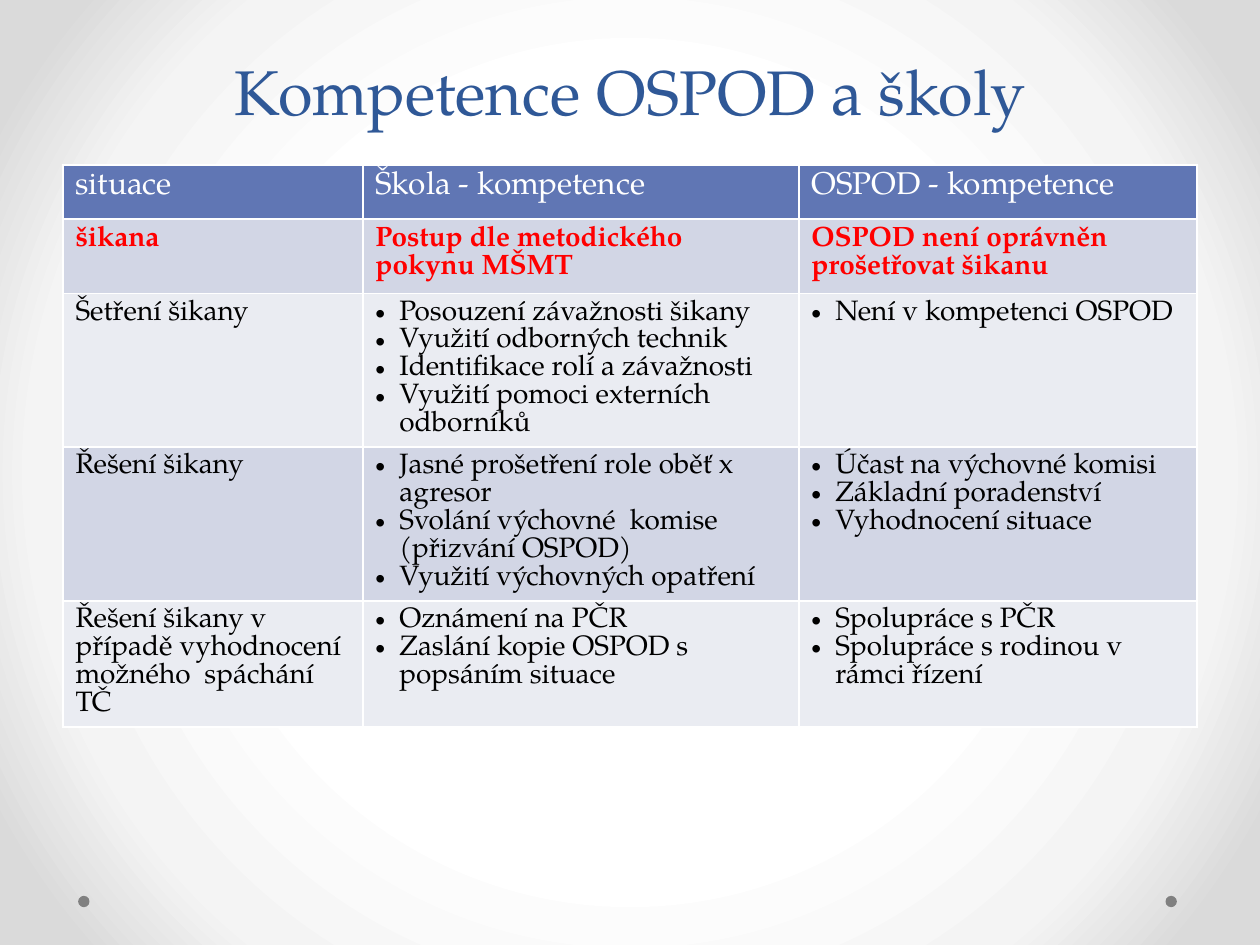
from lxml import etree
from pptx import Presentation
from pptx.dml.color import RGBColor
from pptx.enum.shapes import MSO_SHAPE
from pptx.enum.text import MSO_ANCHOR, PP_ALIGN
from pptx.oxml.ns import qn
from pptx.util import Inches, Pt

OVAL = MSO_SHAPE.OVAL
BOTTOM = MSO_ANCHOR.BOTTOM
CENTER = PP_ALIGN.CENTER
FONT = "TeX Gyre Pagella"
COLORS = {
    "title": "2F5897", "head": "6076B4", "odd": "D2D6E5", "even": "EAECF2",
    "white": "FFFFFF", "black": "000000", "red": "FF0000", "dot": "808080",
}
GLOW = [(50, "FFFFFF"), (76, "F4F4F4"), (92, "DADADA")]

TITLE = "Kompetence OSPOD a školy"
ROWS = [
    ("situace", "Škola - kompetence", "OSPOD - kompetence"),
    ("šikana", "Postup dle metodického pokynu MŠMT",
     "OSPOD není oprávněn prošetřovat šikanu"),
    ("Šetření šikany",
     ["Posouzení závažnosti šikany", "Využití odborných technik",
      "Identifikace rolí a závažnosti", "Využití pomoci externích odborníků"],
     ["Není v kompetenci OSPOD"]),
    ("Řešení šikany",
     ["Jasné prošetření role oběť x agresor",
      "Svolání výchovné  komise (přizvání OSPOD)",
      "Využití výchovných opatření"],
     ["Účast na výchovné komisi", "Základní poradenství", "Vyhodnocení situace"]),
    ("Řešení šikany v případě vyhodnocení možného  spáchání TČ",
     ["Oznámení na PČR", "Zaslání kopie OSPOD s popsáním situace"],
     ["Spolupráce s PČR", "Spolupráce s rodinou v rámci řízení"]),
]
WIDTHS = [2.38, 3.46, 3.16]
HEIGHTS = [0.43, 0.59, 1.22, 1.22, 1]
DOTS = [0.62, 9.25]


def rgb(name):
    return RGBColor.from_string(COLORS[name])


def write(frame, text, size=16, color="black", bold=False, align=None, pitch=16):
    bullets = isinstance(text, list)
    for i, line in enumerate(text if bullets else [text]):
        para = frame.add_paragraph() if i else frame.paragraphs[0]
        run = para.add_run()
        run.text = line
        font = run.font
        font.name, font.size, font.bold = FONT, Pt(size), bold
        font.color.rgb = rgb(color)
        para.line_spacing = Pt(pitch)
        if align is not None:
            para.alignment = align
        if bullets:
            props = para._p.get_or_add_pPr()
            props.set("marL", str(Inches(0.19)))
            props.set("indent", str(-Inches(0.19)))
            etree.SubElement(props, qn("a:buFont"), typeface="Arial")
            etree.SubElement(props, qn("a:buChar"), char="•")


def edge(cell):
    props = cell._tc.get_or_add_tcPr()
    for i, side in enumerate("LRTB"):
        line = etree.Element(qn("a:ln" + side), w=str(Pt(1)))
        fill = etree.SubElement(line, qn("a:solidFill"))
        etree.SubElement(fill, qn("a:srgbClr"), val=COLORS["white"])
        props.insert(i, line)


def glow(slide):
    fill = slide.background.fill
    fill.gradient()
    grad = slide._element.find(".//" + qn("a:gradFill"))
    for child in list(grad):
        grad.remove(child)
    stops = etree.SubElement(grad, qn("a:gsLst"))
    for pos, color in GLOW:
        stop = etree.SubElement(stops, qn("a:gs"), pos=str(pos * 1000))
        etree.SubElement(stop, qn("a:srgbClr"), val=color)
    shade = etree.SubElement(grad, qn("a:path"), path="circle")
    etree.SubElement(shade, qn("a:fillToRect"), l="50000", t="50000", r="50000", b="50000")


def main():
    deck = Presentation()
    deck.slide_width, deck.slide_height = Inches(10), Inches(7.5)
    slide = deck.slides.add_slide(deck.slide_layouts[6])
    glow(slide)

    for left in DOTS:
        dot = slide.shapes.add_shape(
            OVAL, Inches(left), Inches(7.11), Inches(0.09), Inches(0.09))
        dot.shadow.inherit = False
        dot.fill.solid()
        dot.fill.fore_color.rgb = rgb("dot")
        dot.line.fill.background()

    box = slide.shapes.add_textbox(Inches(0.5), 0, Inches(9), Inches(1.07))
    frame = box.text_frame
    frame.word_wrap = True
    frame.vertical_anchor = BOTTOM
    write(frame, TITLE, size=36, color="title", align=CENTER, pitch=58)

    table = slide.shapes.add_table(
        len(ROWS), len(WIDTHS), Inches(0.5), Inches(1.31),
        Inches(sum(WIDTHS)), Inches(sum(HEIGHTS))).table
    for col, width in zip(table.columns, WIDTHS):
        col.width = Inches(width)
    looks = [dict(size=18, color="white", pitch=18), dict(color="red", bold=True)]
    for r, (row, height) in enumerate(zip(ROWS, HEIGHTS)):
        table.rows[r].height = Inches(height)
        look = looks[r] if r < len(looks) else {}
        shade = "head" if r == 0 else "odd" if r % 2 else "even"
        for c, text in enumerate(row):
            cell = table.cell(r, c)
            cell.fill.solid()
            cell.fill.fore_color.rgb = rgb(shade)
            edge(cell)
            write(cell.text_frame, text, **look)

    deck.save("out.pptx")


if __name__ == "__main__":
    main()
